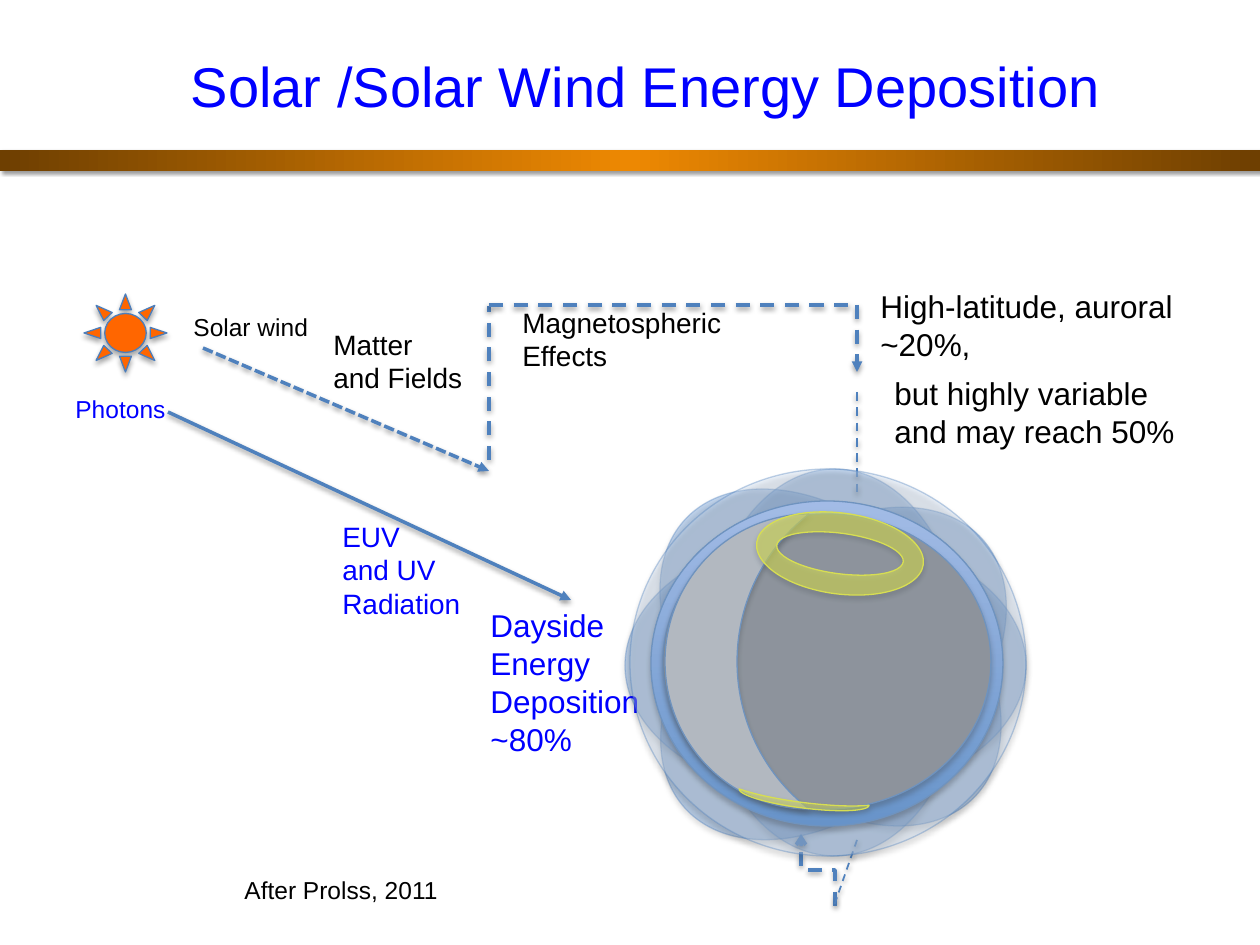
"""Build a slide on how solar and solar wind energy reaches the Earth."""
from lxml import etree
from pptx import Presentation
from pptx.dml.color import RGBColor
from pptx.enum.dml import MSO_LINE
from pptx.enum.shapes import MSO_CONNECTOR, MSO_SHAPE
from pptx.enum.text import MSO_ANCHOR, PP_ALIGN
from pptx.oxml.ns import qn
from pptx.util import Emu, Pt

OVAL, MOON, DONUT = MSO_SHAPE.OVAL, MSO_SHAPE.MOON, MSO_SHAPE.DONUT
SUN, RECT = MSO_SHAPE.SUN, MSO_SHAPE.RECTANGLE
LINE, ELBOW = MSO_CONNECTOR.STRAIGHT, MSO_CONNECTOR.ELBOW
SOLID, DASH, DOTS = MSO_LINE.SOLID, MSO_LINE.DASH, MSO_LINE.SQUARE_DOT
LEFT, CENTER = PP_ALIGN.LEFT, PP_ALIGN.CENTER
TOP, MIDDLE = MSO_ANCHOR.TOP, MSO_ANCHOR.MIDDLE

BLUE, BLACK, EDGE, WIRE = "0000FF", "000000", "4B7EBC", "4F81BD"
YELLOW = "FFFF00"
SOFT = (BLACK, 35, 3.1, 1.8, 90)
THIN = (BLACK, 38, 3.1, 1.6, 90)
HARD = ("808080", 80, 2, 2, 45)

HAZE = dict(fill="558ED5", alpha=34, fade=34)
GLOBE = [
    (OVAL, (702, 473, 263, 401), dict(HAZE, turn=47.8)),
    (OVAL, (699, 457, 263, 401), dict(HAZE, turn=314.1)),
    (OVAL, (694, 465, 263, 401), dict(HAZE, turn=90)),
    (OVAL, (703, 469, 263, 387), HAZE),
    (OVAL, (651, 501, 352, 325), dict(fill=["3F80CE", "A4C4FF"], angle=270)),
    (OVAL, (663, 514, 328, 295), dict(fill="808080")),
    (MOON, (665, 514, 144, 295), dict(fill="BFBFBF")),
    (DONUT, (756, 513, 168, 81),
     dict(fill=YELLOW, alpha=59, edge=YELLOW, turn=7.5)),
    (SUN, (84, 294, 83, 78), dict(fill="FF6600")),
    (MOON, (798, 737, 11, 131),
     dict(fill=YELLOW, alpha=45, edge=YELLOW, turn=277.2)),
]
FRONT = [
    (OVAL, (630, 469, 396, 387), dict(fill="C6D9F1", alpha=34, fade=34)),
    (RECT, (0, 150, 1260, 21),
     dict(fill=["6E3F01", "ED8802", "6E3F01"], edge=None, shade=HARD)),
]
PATHS = [
    ((168, 412, 571, 600), dict(dash=SOLID, tip="triangle")),
    ((203, 348, 489, 471), dict(dash=DOTS, tip="triangle")),
    ((489, 460, 489, 306), {}),
    ((489, 305, 857, 305), {}),
    ((857, 305, 857, 372), dict(tip="triangle")),
    ((857, 392, 857, 493), dict(width=1.25)),
    ((782, 887, 854, 853), dict(kind=ELBOW, turn=270, tip="arrow")),
    ((857, 840, 834, 906), dict(width=1)),
]
TEXTS = [
    (["Solar /Solar Wind Energy Deposition"], (126, 0, 1040, 171),
     dict(size=32, color=BLUE, align=CENTER, anchor=MIDDLE)),
    (["Photons"], (63, 388, 145, 43), dict(size=14, color=BLUE)),
    (["EUV", "and UV", "Radiation"], (330, 513, 180, 115), dict(color=BLUE)),
    (["Solar wind"], (181, 306, 145, 43), dict(size=14)),
    (["High-latitude, auroral", "~20%,"], (868, 281, 329, 89),
     dict(size=18)),
    (["Magnetospheric Effects"], (510, 299, 311, 81), {}),
    (["Dayside", "Energy", "Deposition", "~80%"], (478, 600, 209, 165),
     dict(size=18, color=BLUE)),
    (["Matter", "and Fields"], (321, 321, 180, 81), {}),
    (["but highly variable and may reach 50%"], (882, 368, 315, 127),
     dict(size=18)),
    (["After Prolss, 2011"], (232, 869, 270, 43), dict(size=14)),
]


def px(n):
    return Emu(round(n * 914400 / 126))


def rgb(code):
    return RGBColor.from_string(code)


def add(node, tag, **attrs):
    kid = etree.SubElement(node, qn("a:" + tag))
    for key, val in attrs.items():
        kid.set(key, str(val))
    return kid


def fade_fill(node, alpha):
    add(node.find(".//" + qn("a:srgbClr")), "alpha", val=alpha * 1000)


def cast(props, shade):
    """Append a drop shadow to shape properties."""
    color, alpha, blur, dist, angle = shade
    drop = add(add(props, "effectLst"), "outerShdw", blurRad=Pt(blur),
               dist=Pt(dist), dir=angle * 60000, rotWithShape=0)
    add(add(drop, "srgbClr", val=color), "alpha", val=alpha * 1000)


def blend(props, codes, angle):
    """Swap the solid fill for evenly spaced gradient stops."""
    old = props.find(qn("a:solidFill"))
    grad = add(props, "gradFill", rotWithShape=1)
    stops = add(grad, "gsLst")
    for i, code in enumerate(codes):
        stop = add(stops, "gs", pos=100000 * i // (len(codes) - 1))
        add(stop, "srgbClr", val=code)
    add(grad, "lin", ang=angle * 60000, scaled=0)
    props.replace(old, grad)


def draw(slide, kind, box, fill, alpha=None, edge=EDGE, fade=None, turn=0,
         angle=0, shade=SOFT):
    shape = slide.shapes.add_shape(kind, *map(px, box))
    shape.rotation = turn
    props = shape._element.spPr
    shape.fill.solid()
    if isinstance(fill, list):
        blend(props, fill, angle)
    else:
        shape.fill.fore_color.rgb = rgb(fill)
    if alpha:
        fade_fill(props.find(qn("a:solidFill")), alpha)
    if edge:
        shape.line.color.rgb = rgb(edge)
        shape.line.width = Pt(0.75)
    else:
        shape.line.fill.background()
    if fade:
        fade_fill(props.find(qn("a:ln")), fade)
    cast(props, shade)


def link(slide, ends, kind=LINE, width=2, dash=DASH, tip=None, turn=0):
    wire = slide.shapes.add_connector(kind, *map(px, ends))
    wire.line.color.rgb = rgb(WIRE)
    wire.line.width = Pt(width)
    wire.line.dash_style = dash
    props = wire._element.spPr
    if turn:
        props.find(qn("a:xfrm")).set("rot", str(turn * 60000))
    if tip:
        add(props.find(qn("a:ln")), "tailEnd", type=tip)
    cast(props, THIN)


def write(slide, lines, box, size=16, color=BLACK, align=LEFT, anchor=TOP):
    frame = slide.shapes.add_textbox(*map(px, box)).text_frame
    frame.word_wrap = True
    frame.vertical_anchor = anchor
    frame.text = "\n".join(lines)
    for para in frame.paragraphs:
        para.alignment = align
        font = para.runs[0].font
        font.name, font.size = "Arial", Pt(size)
        font.color.rgb = rgb(color)


def main():
    deck = Presentation()
    deck.slide_width, deck.slide_height = px(1260), px(945)
    slide = deck.slides.add_slide(deck.slide_layouts[6])
    for kind, box, look in GLOBE:
        draw(slide, kind, box, **look)
    for ends, look in PATHS:
        link(slide, ends, **look)
    for lines, box, look in TEXTS:
        write(slide, lines, box, **look)
    for kind, box, look in FRONT:
        draw(slide, kind, box, **look)
    deck.save("out.pptx")


if __name__ == "__main__":
    main()
